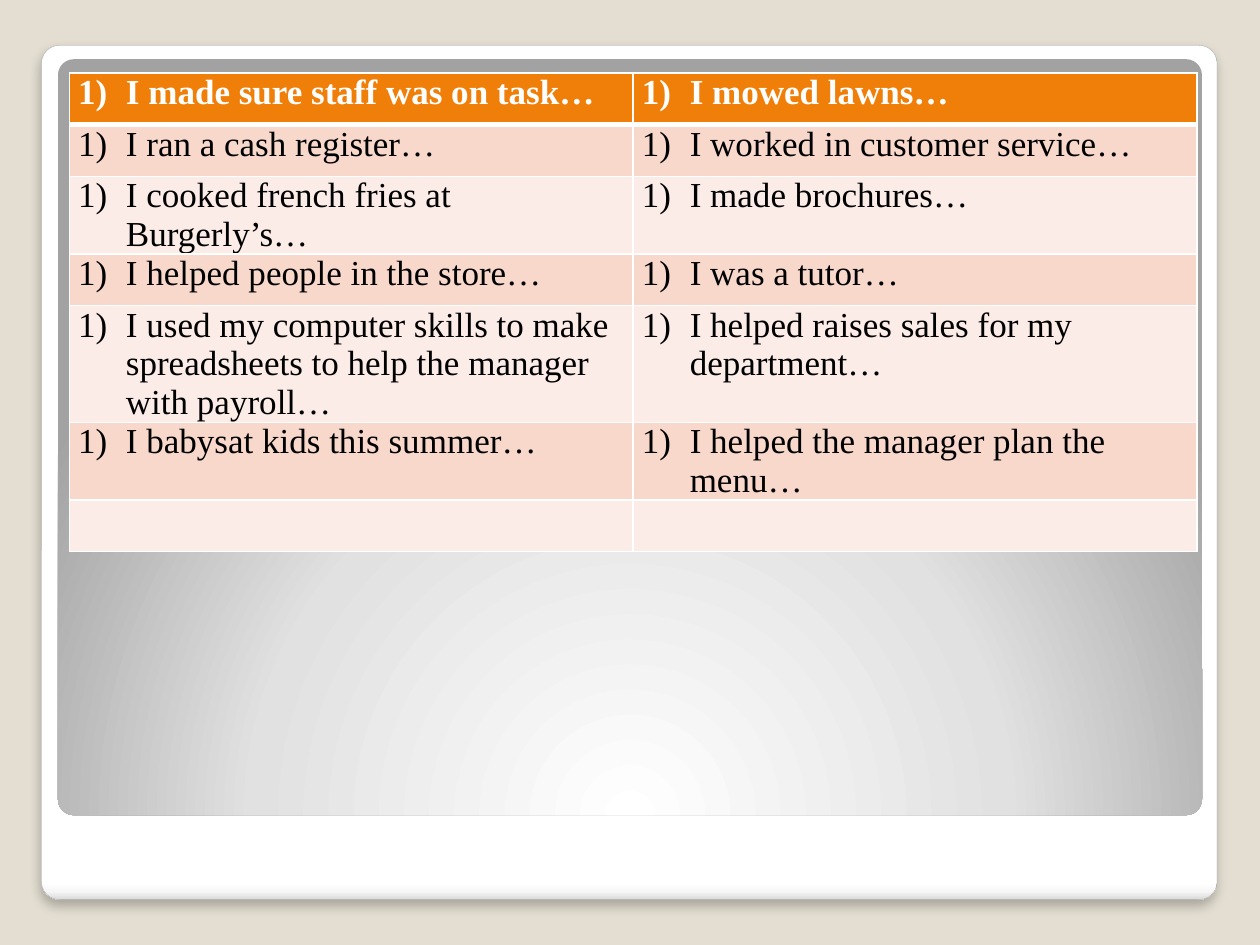
import pptx
import pptx.util
import pptx.dml.color
import pptx.enum.shapes
import pptx.oxml
import pptx.oxml.ns

Inches = pptx.util.Inches

ROWS = [
    ("I made sure staff was on task…", "I mowed lawns…"),
    ("I ran a cash register…", "I worked in customer service…"),
    ("I cooked french fries at Burgerly’s…", "I made brochures…"),
    ("I helped people in the store…", "I was a tutor…"),
    ("I used my computer skills to make spreadsheets to help the manager with payroll…",
     "I helped raises sales for my department…"),
    ("I babysat kids this summer…", "I helped the manager plan the menu…"),
    ("", ""),
]

THEME = {
    "font": "Times New Roman", "size": 20,
    "background": "E3DED1", "frame_line": "A4A4A4",
    "header": "F07F09", "bands": ("F9D8CC", "FCECE7"),
    "header_text": "FFFFFF", "text": "000000", "border": "FFFFFF",
    "frame": [(0, "FFFFFF"), (98, "FFFFFF"), (99, "F7F7F7"), (100, "DADADA")],
    "panel": [(0, "FFFFFF"), (55, "E1E1E1"), (100, "A2A2A2")],
}
LINEAR = '<a:lin ang="5400000" scaled="0"/>'
RADIAL = ('<a:path path="circle"><a:fillToRect l="50000" t="175000" '
          'r="50000" b="-75000"/></a:path>')
SHADOW = ('<a:outerShdw {ns} blurRad="76200" dist="50800" dir="5400000" algn="tl" '
          'rotWithShape="0"><a:srgbClr val="000000"><a:alpha val="25000"/>'
          '</a:srgbClr></a:outerShdw>')


def color(value):
    return pptx.dml.color.RGBColor.from_string(value)


def element(template):
    return pptx.oxml.parse_xml(template.replace("{ns}", pptx.oxml.ns.nsdecls("a")))


def add_rounded_panel(slide, bounds, stops, direction):
    panel = slide.shapes.add_shape(
        pptx.enum.shapes.MSO_SHAPE.ROUNDED_RECTANGLE, *map(Inches, bounds))
    panel.adjustments[0] = 0.021
    panel.shadow.inherit = False
    stop_xml = "".join(
        f'<a:gs pos="{position * 1000}"><a:srgbClr val="{value}"/></a:gs>'
        for position, value in stops)
    gradient = element(f'<a:gradFill {{ns}} rotWithShape="1"><a:gsLst>{stop_xml}</a:gsLst>'
                       f'{direction}</a:gradFill>')
    panel.element.spPr.insert(2, gradient)
    return panel


def format_borders(cell, is_header):
    properties = cell._tc.get_or_add_tcPr()
    for index, side in enumerate("LRTB"):
        points = 3 if is_header and side == "B" else 1
        properties.insert(index, element(
            f'<a:ln{side} {{ns}} w="{pptx.util.Pt(points)}"><a:solidFill>'
            f'<a:srgbClr val="{THEME["border"]}"/></a:solidFill></a:ln{side}>'))


def format_numbered(para):
    properties = para._p.get_or_add_pPr()
    properties.set("marL", str(Inches(0.38)))
    properties.set("indent", str(Inches(-0.38)))
    properties.append(element('<a:buFont {ns} typeface="+mj-lt"/>'))
    properties.append(element('<a:buAutoNum {ns} type="arabicParenR"/>'))
    properties.append(element(
        f'<a:tabLst {{ns}}><a:tab pos="{Inches(0.5)}" algn="l"/></a:tabLst>'))


def fill_cell(cell, text, row_index):
    is_header = row_index == 0
    fill = THEME["header"] if is_header else THEME["bands"][(row_index - 1) % 2]
    cell.fill.solid()
    cell.fill.fore_color.rgb = color(fill)
    cell.margin_left = cell.margin_right = Inches(0.07)
    cell.margin_top = cell.margin_bottom = 0
    format_borders(cell, is_header)
    if not text:
        return
    cell.text_frame.text = text
    para = cell.text_frame.paragraphs[0]
    format_numbered(para)
    font = para.runs[0].font
    font.name = THEME["font"]
    font.size = pptx.util.Pt(THEME["size"])
    font.bold = is_header
    font.color.rgb = color(THEME["header_text" if is_header else "text"])


def main():
    deck = pptx.Presentation()
    deck.slide_width, deck.slide_height = Inches(10), Inches(7.5)
    slide = deck.slides.add_slide(deck.slide_layouts[6])
    slide.background.fill.solid()
    slide.background.fill.fore_color.rgb = color(THEME["background"])

    frame = add_rounded_panel(slide, (0.33, 0.36, 9.33, 6.78), THEME["frame"], LINEAR)
    frame.line.color.rgb = color(THEME["frame_line"])
    frame.line.width = pptx.util.Pt(0.16)
    frame.element.spPr.find(pptx.oxml.ns.qn("a:effectLst")).append(element(SHADOW))
    panel = add_rounded_panel(slide, (0.46, 0.47, 9.08, 6), THEME["panel"], RADIAL)
    panel.line.fill.background()

    row_height = 0.41
    table = slide.shapes.add_table(
        len(ROWS), len(ROWS[0]), Inches(0.55), Inches(0.58),
        Inches(8.95), Inches(row_height * len(ROWS))).table
    for row_index, texts in enumerate(ROWS):
        table.rows[row_index].height = Inches(row_height)
        for column_index, text in enumerate(texts):
            fill_cell(table.cell(row_index, column_index), text, row_index)

    deck.save("out.pptx")


if __name__ == "__main__":
    main()
